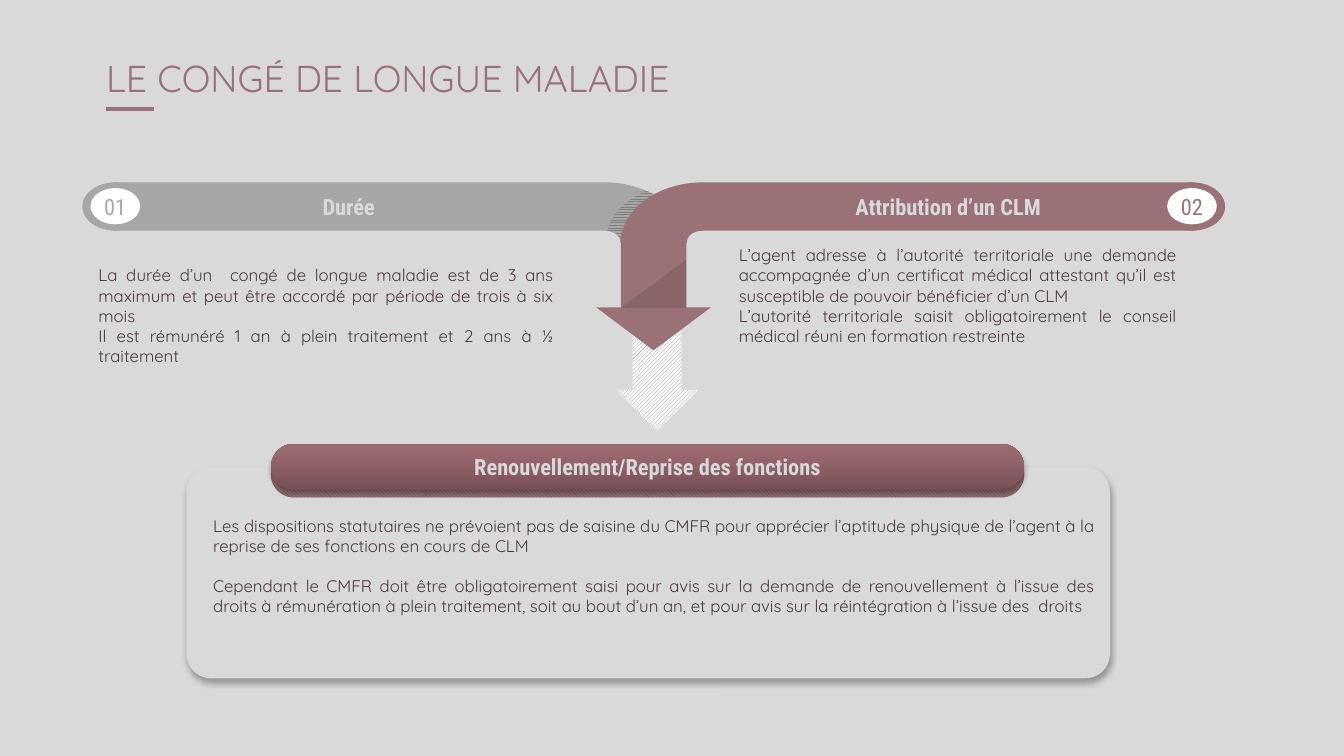
from dataclasses import dataclass

from lxml import etree
from pptx import Presentation
from pptx import util as u
from pptx.dml.color import RGBColor
from pptx.enum import dml, shapes, text
from pptx.oxml.ns import qn

Kind = shapes.MSO_SHAPE
Hatch = dml.MSO_PATTERN
Align = text.PP_ALIGN
Pt = u.Pt


@dataclass(frozen=True)
class Theme:
    back: str = "D9D9D9"
    rose: str = "997177"
    wine: str = "745358"
    deep: str = "775056"
    glow: str = "9A686F"
    gray: str = "A6A6A6"
    dusk: str = "808080"
    ink: str = "4D383B"
    white: str = "FFFFFF"
    black: str = "000000"
    sans: str = "Quicksand"
    slim: str = "Roboto Condensed"
    title: float = 20
    head: float = 12
    body: float = 9


T = Theme()
SPAN = 700.4
BAR_TOP, BAR_HIGH = 97.7, 25.9

ELBOW = [(367.9, 130.1), (332.6, 130.1),
         (332.6, 126.5, 329, 123.6, 324, 123.6), (324, 97.7),
         (347.8, 97.7, 367.9, 112.1, 367.9, 130.1)]
FOLD = [(346.3, 102.2), (347.8, 103, 349.2, 103.7, 350.6, 104.4),
        (339.8, 110.2, 333.4, 119.5, 333.4, 130.3), (332.6, 130.3),
        (332.6, 126.7, 329.8, 123.8, 325.4, 123.8),
        (327.6, 114.5, 335.5, 106.6, 346.3, 102.2)]

LEFT = ["La durée d’un  congé de longue maladie est de 3 ans maximum et peut être accordé "
        "par période de trois à six mois",
        "Il est rémunéré 1 an à plein traitement et 2 ans à ½ traitement"]
RIGHT = ["L’agent adresse à l’autorité territoriale une demande accompagnée d’un certificat "
         "médical attestant qu’il est susceptible de pouvoir bénéficier d’un CLM",
         "L’autorité territoriale saisit obligatoirement le conseil médical réuni en "
         "formation restreinte"]
RENEW = ["Les dispositions statutaires ne prévoient pas de saisine du CMFR pour apprécier "
         "l’aptitude physique de l’agent à la reprise de ses fonctions en cours de CLM",
         "Cependant le CMFR doit être obligatoirement saisi pour avis sur la demande de "
         "renouvellement à l’issue des droits à rémunération à plein traitement, soit au bout "
         "d’un an, et pour avis sur la réintégration à l’issue des  droits"]


def rgb(tone):
    return RGBColor.from_string(tone)


def place(item, x, y, w, h):
    item.left, item.top, item.width, item.height = (Pt(n) for n in (x, y, w, h))


def paint(item, tone):
    item.shadow.inherit = False
    item.line.fill.background()
    item.fill.solid()
    item.fill.fore_color.rgb = rgb(tone)


def hatch(item, kind, fore, back):
    item.fill.patterned()
    item.fill.pattern = kind
    item.fill.fore_color.rgb = rgb(fore)
    item.fill.back_color.rgb = rgb(back)


def fade(item, share):
    tone = item._element.spPr.find(qn("a:solidFill")).find(qn("a:srgbClr"))
    etree.SubElement(tone, qn("a:alpha"), val=str(share * 1000))


def shade(item, share, blur, dist):
    cast = etree.SubElement(item._element.spPr.find(qn("a:effectLst")), qn("a:outerShdw"),
                            blurRad=str(Pt(blur)), dist=str(Pt(dist)), dir="5400000",
                            algn="t", rotWithShape="0")
    tone = etree.SubElement(cast, qn("a:srgbClr"), val=T.black)
    etree.SubElement(tone, qn("a:alpha"), val=str(share * 1000))


def shape(slide, kind, box, tone, *curve):
    item = slide.shapes.add_shape(kind, *(Pt(n) for n in box))
    paint(item, tone)
    for i, part in enumerate(curve):
        item.adjustments[i] = part
    return item


def trace(slide, steps, tone, flip=False):
    rows = [[(Pt(SPAN - x if flip else x), Pt(y)) for x, y in zip(step[::2], step[1::2])]
            for step in steps]
    ends = [row[-1] for row in rows]
    pen = slide.shapes.build_freeform(*ends[0], scale=1.0)
    pen.add_line_segments(ends[1:], close=True)
    item = pen.convert_to_shape()
    for row, leg in zip(rows[1:], list(item._element.iter(qn("a:lnTo")))):
        if len(row) == 3:
            bend = etree.Element(qn("a:cubicBezTo"))
            for x, y in row:
                etree.SubElement(bend, qn("a:pt"), x=str(x - item.left), y=str(y - item.top))
            leg.getparent().replace(leg, bend)
    paint(item, tone)
    return item


def write(frame, lines, size, font, tone, align, bold=False, pad=(0, 0), mid=False, gap=0):
    frame.word_wrap = True
    frame.auto_size = text.MSO_AUTO_SIZE.NONE
    frame.margin_left = frame.margin_right = Pt(pad[0])
    frame.margin_top, frame.margin_bottom = Pt(pad[1]), 0
    frame.vertical_anchor = text.MSO_ANCHOR.MIDDLE if mid else text.MSO_ANCHOR.TOP
    for i, line in enumerate(lines):
        para = frame.paragraphs[0] if i == 0 else frame.add_paragraph()
        para.alignment = align
        para.space_before = Pt(gap if i else 0)
        run = para.add_run()
        run.text = line
        run.font.size, run.font.name, run.font.bold = Pt(size), font, bold
        run.font.color.rgb = rgb(tone)


def label(frame, words, tone=T.back, bold=True, pad=0):
    write(frame, [words], T.head, T.slim, tone, Align.CENTER, bold, (pad, 0), True)


def prose(slide, box, lines, pad, gap=0):
    item = slide.shapes.add_textbox(*(Pt(n) for n in box))
    write(item.text_frame, lines, T.body, T.sans, T.ink, Align.JUSTIFY, pad=pad, gap=gap)


def title(slide):
    rule = slide.shapes.add_connector(shapes.MSO_CONNECTOR.STRAIGHT,
                                      Pt(57), Pt(58.3), Pt(82.3), Pt(58.3))
    rule.line.color.rgb = rgb(T.rose)
    rule.line.width = Pt(2.25)
    etree.SubElement(rule._element.spPr, qn("a:effectLst"))
    head = slide.shapes.title
    place(head, 56.8, 26.6, 536.4, 36.7)
    write(head.text_frame, ["LE CONGÉ DE LONGUE MALADIE"], T.title, T.sans, T.rose, Align.LEFT)
    head.text_frame.paragraphs[0].line_spacing = Pt(27)


def branch(slide, tone, mark, words, start, flip=False):
    def side(x, w):
        return SPAN - x - w if flip else x

    trace(slide, ELBOW, tone, flip)
    shape(slide, Kind.RECTANGLE, (side(60.5, 263.8), BAR_TOP, 263.8, BAR_HIGH), tone)
    shape(slide, Kind.OVAL, (side(44.1, 35.3), BAR_TOP, 35.3, BAR_HIGH), tone)
    name = slide.shapes.add_textbox(Pt(start), Pt(102.6), Pt(277.2), Pt(16))
    label(name.text_frame, words, pad=5.8)
    disc = shape(slide, Kind.OVAL, (side(48.5, 26.6), 100.8, 26.6, 19.4), T.white)
    label(disc.text_frame, mark, tone, False)


def stem(slide):
    head = shape(slide, Kind.ISOSCELES_TRIANGLE, (319.5, 164.7, 61.2, 23), T.rose)
    head.rotation = 180
    shape(slide, Kind.RECTANGLE, (332.6, 129.9, 35.2, 35), T.rose)
    dark = shape(slide, Kind.RIGHT_TRIANGLE, (337.2, 134.4, 25.9, 35.2), T.black)
    dark.rotation = 270
    fade(dark, 10)


def card(slide):
    panel = shape(slide, Kind.ROUNDED_RECTANGLE, (100, 250.2, 494.6, 113.2), T.back, 0.115)
    shade(panel, 32, 3.5, 2.2)
    prose(slide, (99.8, 276.1, 500.4, 82.8), RENEW, (14.4, 0), 10.8)
    base = shape(slide, Kind.ROUNDED_RECTANGLE, (145.3, 241.9, 403.3, 24.5), T.rose, 0.5)
    hatch(base, Hatch.DARK_DOWNWARD_DIAGONAL, T.wine, T.rose)
    base.line.color.rgb = rgb(T.wine)
    base.line.width = Pt(0.25)
    pill = shape(slide, Kind.ROUNDED_RECTANGLE, (145.3, 237.8, 403.3, 24.5), T.glow, 0.5)
    pill.fill.gradient()
    pill.fill.gradient_angle = 90
    for stop, tone, spot in zip(pill.fill.gradient_stops, (T.deep, T.glow), (0, 0.8)):
        stop.color.rgb = rgb(tone)
        stop.position = spot
    shade(pill, 35, 3.1, 1.8)
    label(pill.text_frame, "Renouvellement/Reprise des fonctions")


def main():
    deck = Presentation()
    deck.slide_width, deck.slide_height = Pt(720), Pt(405)
    slide = deck.slides.add_slide(deck.slide_layouts[5])
    slide.background.fill.solid()
    slide.background.fill.fore_color.rgb = rgb(T.back)

    title(slide)
    arrow = shape(slide, Kind.DOWN_ARROW, (330, 175.3, 43.9, 55.4), T.white, 0.595, 0.495)
    hatch(arrow, Hatch.LIGHT_UPWARD_DIAGONAL, T.dusk, T.white)
    card(slide)
    branch(slide, T.gray, "01", "Durée", 48.2)
    fold = trace(slide, FOLD, T.gray)
    hatch(fold, Hatch.NARROW_HORIZONTAL, T.dusk, T.gray)
    branch(slide, T.rose, "02", "Attribution d’un CLM", 369.4, True)
    stem(slide)
    prose(slide, (44.1, 131.2, 260.6, 59), LEFT, (8.6, 10.8))
    prose(slide, (387.2, 131.2, 251.3, 59), RIGHT, (8.6, 0))
    deck.save("out.pptx")


if __name__ == "__main__":
    main()
